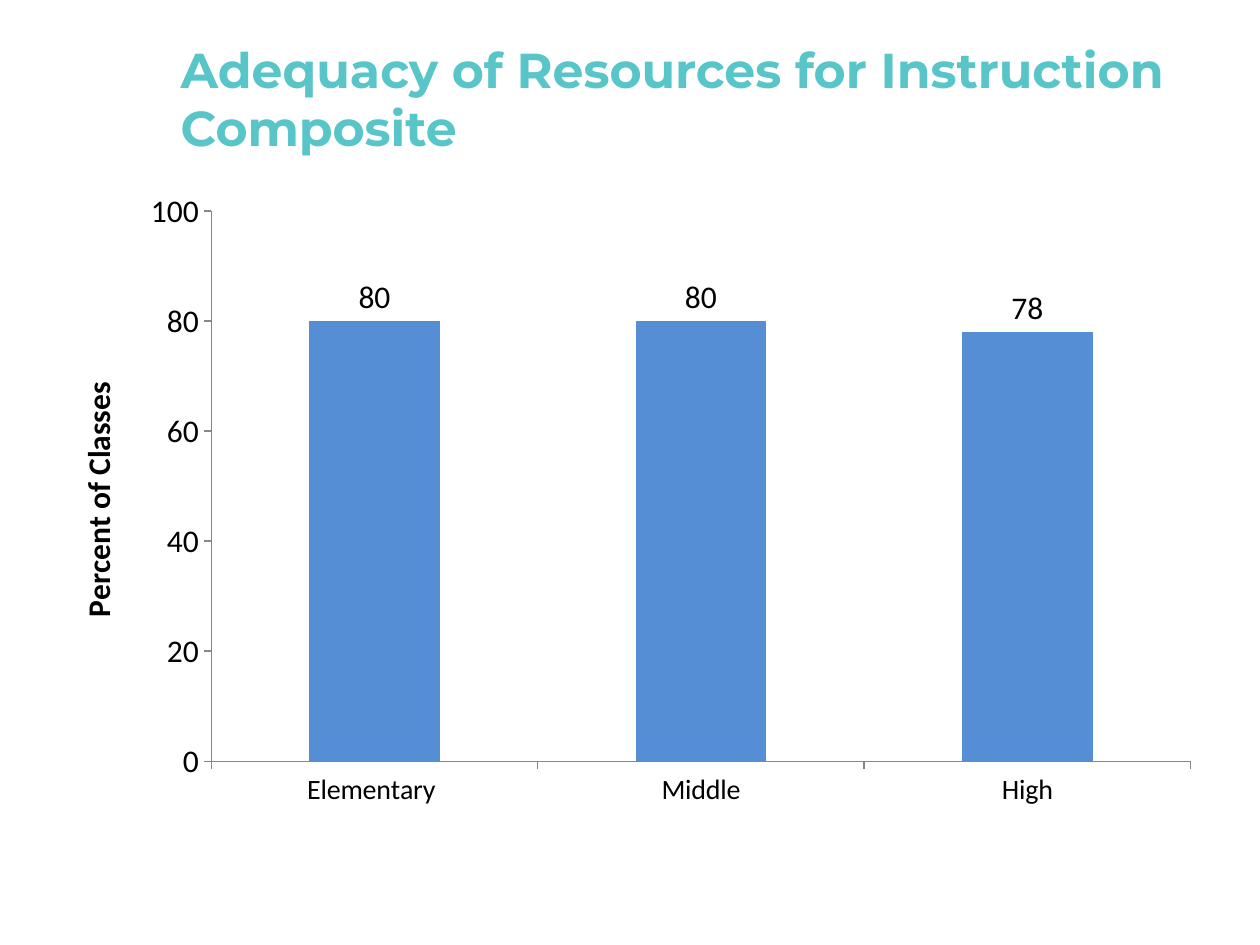
from dataclasses import dataclass

from lxml.etree import SubElement
from pptx import Presentation
from pptx.chart.data import CategoryChartData as Data
from pptx.dml.color import RGBColor as Color
from pptx.enum.chart import XL_CHART_TYPE as Kind
from pptx.enum.chart import XL_LABEL_POSITION as Spot
from pptx.enum.chart import XL_TICK_MARK as Tick
from pptx.enum.text import MSO_ANCHOR as Anchor
from pptx.enum.text import MSO_AUTO_SIZE as Fit
from pptx.enum.text import PP_ALIGN as Align
from pptx.oxml.ns import qn
from pptx.util import Emu, Pt

SCALE = 914400 // 126


@dataclass(frozen=True)
class Theme:
    teal: str = "58C5C9"
    blue: str = "558ED5"
    gray: str = "868686"
    black: str = "000000"
    head: str = "Montserrat"
    body: str = "Calibri"
    big: int = 28
    mid: int = 18
    small: int = 16


class Deck:
    """Holds the theme and the current slide, and adds styled elements to it."""

    def __init__(self, theme, wide, high):
        self.theme = theme
        self.show = Presentation()
        self.show.slide_width, self.show.slide_height = self.px(wide, high)
        self.slide = self.show.slides.add_slide(self.show.slide_layouts[5])

    def px(self, *sizes):
        return [Emu(size * SCALE) for size in sizes]

    def style(self, font, size, color, name, bold=False):
        font.size, font.name, font.bold = Pt(size), name, bold
        font.color.rgb = Color.from_string(color)

    def title(self, text, *box):
        shape = self.slide.shapes.title
        shape.left, shape.top, shape.width, shape.height = self.px(*box)
        frame = shape.text_frame
        frame.text = text
        frame.word_wrap, frame.auto_size = True, Fit.NONE
        frame.vertical_anchor = Anchor.MIDDLE
        para = frame.paragraphs[0]
        para.alignment = Align.LEFT
        theme = self.theme
        self.style(para.runs[0].font, theme.big, theme.teal, theme.head, True)

    def axis(self, axis, size):
        theme = self.theme
        axis.has_major_gridlines = False
        axis.major_tick_mark, axis.minor_tick_mark = Tick.OUTSIDE, Tick.NONE
        axis.format.line.color.rgb = Color.from_string(theme.gray)
        axis.format.line.width = Pt(0.75)
        self.style(axis.tick_labels.font, size, theme.black, theme.body)

    def place(self, chart, **parts):
        plot = chart._chartSpace.chart.plotArea
        for old in plot.findall(qn("c:layout")):
            plot.remove(old)
        layout = SubElement(plot, qn("c:layout"))
        plot.insert(0, layout)
        manual = SubElement(layout, qn("c:manualLayout"))
        modes = {"layoutTarget": "inner", "xMode": "edge", "yMode": "edge"}
        for tag, val in {**modes, **parts}.items():
            SubElement(manual, qn(f"c:{tag}")).set("val", str(val))

    def columns(self, cats, vals, label, *box):
        theme = self.theme
        data = Data(number_format="0")
        data.categories = cats
        data.add_series("Series 1", vals)
        frame = self.slide.shapes.add_chart(
            Kind.COLUMN_CLUSTERED, *self.px(*box), data)
        chart = frame.chart
        chart.has_legend = chart.has_title = False
        self.style(chart.font, theme.mid, theme.black, theme.body)
        self.axis(chart.category_axis, theme.small)
        scale = chart.value_axis
        self.axis(scale, theme.mid)
        scale.minimum_scale, scale.maximum_scale = 0, 100
        scale.major_unit = 20
        name = scale.axis_title.text_frame
        name.text = label
        self.style(name.paragraphs[0].runs[0].font,
                   theme.mid, theme.black, theme.body, True)
        plot = chart.plots[0]
        plot.gap_width, plot.vary_by_categories = 150, False
        fill = plot.series[0].format.fill
        fill.solid()
        fill.fore_color.rgb = Color.from_string(theme.blue)
        plot.has_data_labels = True
        labels = plot.data_labels
        labels.show_value, labels.position = True, Spot.OUTSIDE_END
        self.style(labels.font, theme.mid, theme.black, theme.body)
        self.place(chart, x=0.14, y=0.05, w=0.84, h=0.86)


def main():
    deck = Deck(Theme(), 1260, 945)
    deck.title("Adequacy of Resources for Instruction Composite",
               168, 38, 1029, 120)
    deck.columns(["Elementary ", "Middle", "High"], [80, 80, 78],
                 "Percent of Classes", 48, 179, 1166, 640)
    deck.show.save("out.pptx")


if __name__ == "__main__":
    main()
